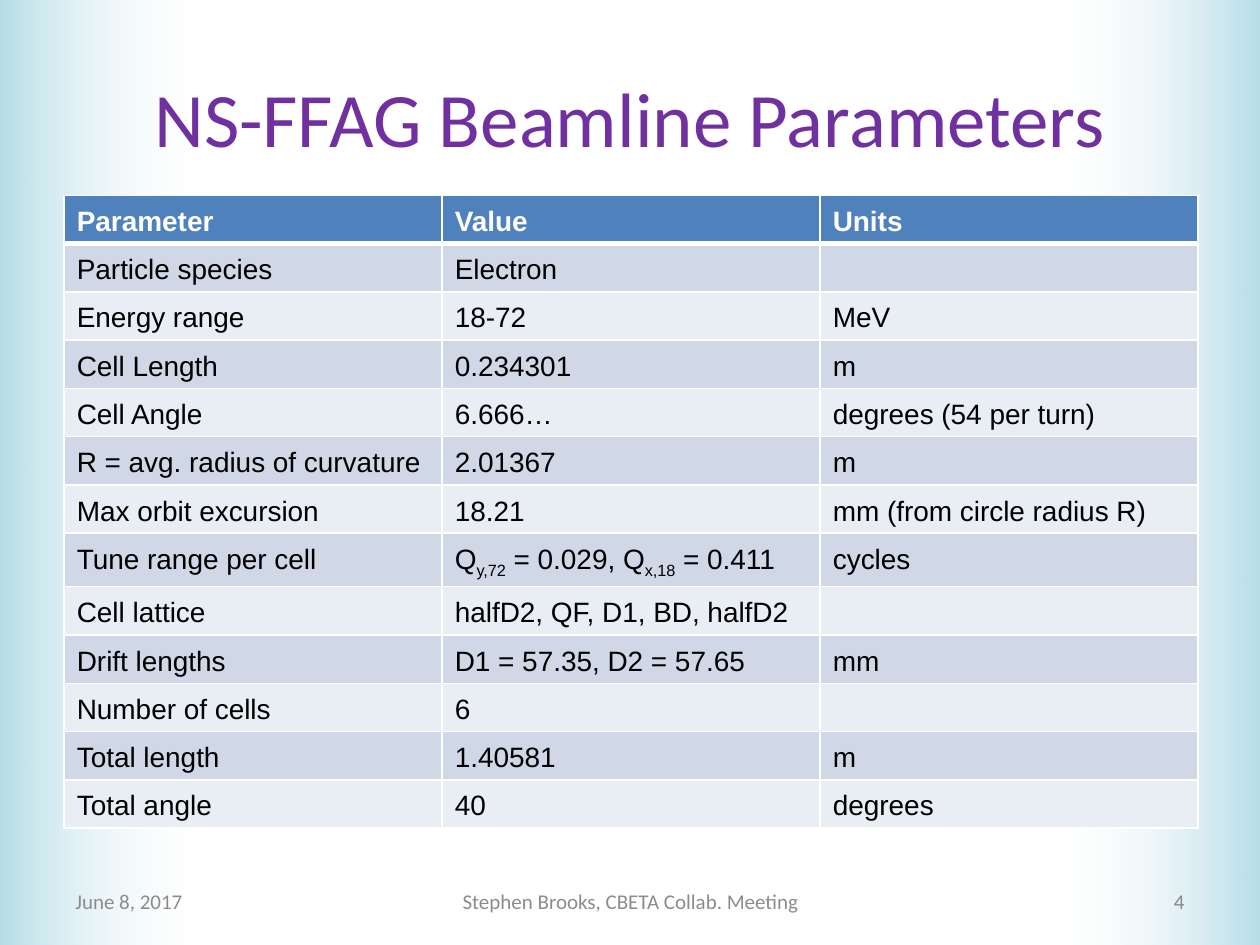
from lxml import etree
from pptx import Presentation
from pptx.dml.color import RGBColor
from pptx.enum import shapes, text
from pptx.oxml.ns import qn
from pptx.util import Inches, Pt

COLORS = {
    "edge": "B7DEE8", "white": "FFFFFF", "black": "000000", "title": "7030A0",
    "header": "4F81BD", "odd": "D0D8E8", "even": "E9EDF4",
    "footer": "8C8C8C", "number": "898989",
}
ALIGN = {"l": text.PP_ALIGN.LEFT, "c": text.PP_ALIGN.CENTER, "r": text.PP_ALIGN.RIGHT}

# Text marked as (text, True) is a subscript
ROWS = [
    ("Parameter", "Value", "Units"),
    ("Particle species", "Electron", ""),
    ("Energy range", "18-72", "MeV"),
    ("Cell Length", "0.234301", "m"),
    ("Cell Angle", "6.666…", "degrees (54 per turn)"),
    ("R = avg. radius of curvature", "2.01367", "m"),
    ("Max orbit excursion", "18.21", "mm (from circle radius R)"),
    ("Tune range per cell",
     [("Q", False), ("y,72", True), (" = 0.029, Q", False),
      ("x,18", True), (" = 0.411", False)], "cycles"),
    ("Cell lattice", "halfD2, QF, D1, BD, halfD2", ""),
    ("Drift lengths", "D1 = 57.35, D2 = 57.65", "mm"),
    ("Number of cells", "6", ""),
    ("Total length", "1.40581", "m"),
    ("Total angle", "40", "degrees"),
]


def rgb(name):
    return RGBColor.from_string(COLORS[name])


def write(tf, content, size=12, font="Calibri", color="black", bold=False,
          align="l", spacing=None):
    """Fill a text frame with a string or a list of (text, subscript) pairs."""
    p = tf.paragraphs[0]
    p.alignment = ALIGN[align]
    if spacing:
        p.line_spacing = spacing
    runs = [(content, False)] if isinstance(content, str) else content
    for words, subscript in runs:
        r = p.add_run()
        r.text = words
        r.font.size, r.font.name, r.font.bold = Pt(size), font, bold
        r.font.color.rgb = rgb(color)
        if subscript:
            r._r.get_or_add_rPr().set("baseline", "-25000")


def add_label(s, box, content, **fmt):
    sp = s.shapes.add_textbox(*map(Inches, box))
    tf = sp.text_frame
    tf.word_wrap = True
    tf.vertical_anchor = text.MSO_ANCHOR.MIDDLE
    write(tf, content, **fmt)


def add_edge(s, box, rotation=0):
    """Side band that fades from the slide edge towards the middle."""
    sp = s.shapes.add_shape(shapes.MSO_SHAPE.RECTANGLE, *map(Inches, box))
    sp.rotation = rotation
    sp.shadow.inherit = False
    sp.line.fill.background()
    sp.fill.gradient()
    sp.fill.gradient_angle = 0
    for stop, color, position in zip(sp.fill.gradient_stops, ("edge", "white"), (0, 1)):
        stop.color.rgb = rgb(color)
        stop.position = position
    last = sp._element.spPr.findall(".//" + qn("a:srgbClr"))[-1]
    etree.SubElement(last, qn("a:alpha"), val="0")


def set_borders(cell, top=1, bottom=1):
    tc_pr = cell._tc.get_or_add_tcPr()
    widths = {"a:lnL": 1, "a:lnR": 1, "a:lnT": top, "a:lnB": bottom}
    for i, (side, width) in enumerate(widths.items()):
        ln = etree.Element(qn(side), w=str(Pt(width)))
        fill = etree.SubElement(ln, qn("a:solidFill"))
        etree.SubElement(fill, qn("a:srgbClr"), val=COLORS["white"])
        tc_pr.insert(i, ln)


def add_parameters(s, box):
    left, top, width, row_height = box
    n_cols = len(ROWS[0])
    table = s.shapes.add_table(
        len(ROWS), n_cols, Inches(left), Inches(top), Inches(width),
        Inches(row_height * len(ROWS))).table
    for col in table.columns:
        col.width = Inches(width / n_cols)
    for i, row in enumerate(ROWS):
        header = i == 0
        fill = "header" if header else ("odd" if i % 2 else "even")
        for j, content in enumerate(row):
            cell = table.cell(i, j)
            cell.margin_bottom = Pt(1.9)
            cell.fill.solid()
            cell.fill.fore_color.rgb = rgb(fill)
            set_borders(cell, top=3 if i == 1 else 1, bottom=3 if header else 1)
            write(cell.text_frame, content, size=16, font="Arial", bold=header,
                  color="white" if header else "black", spacing=1.15)


def add_footer(s, top, height):
    add_label(s, (0.5, top, 2.33, height), "June 8, 2017", color="footer")
    add_label(s, (3.42, top, 3.17, height), "Stephen Brooks, CBETA Collab. Meeting",
              color="footer", align="c")
    add_label(s, (7.17, top, 2.33, height), "4", color="number", align="r")


def main():
    prs = Presentation()
    prs.slide_width, prs.slide_height = Inches(10), Inches(7.5)
    s = prs.slides.add_slide(prs.slide_layouts[6])

    # Background bands
    add_edge(s, (8.31, 0, 1.69, 7.5), rotation=180)
    add_edge(s, (0, 0, 1.69, 7.5))

    # Title, table and footer
    add_label(s, (0.5, 0.3, 9, 1.25), "NS-FFAG Beamline Parameters",
              size=44, color="title", align="c")
    add_parameters(s, (0.51, 1.55, 9, 0.38))
    add_footer(s, 6.95, 0.4)
    prs.save("out.pptx")


if __name__ == "__main__":
    main()
